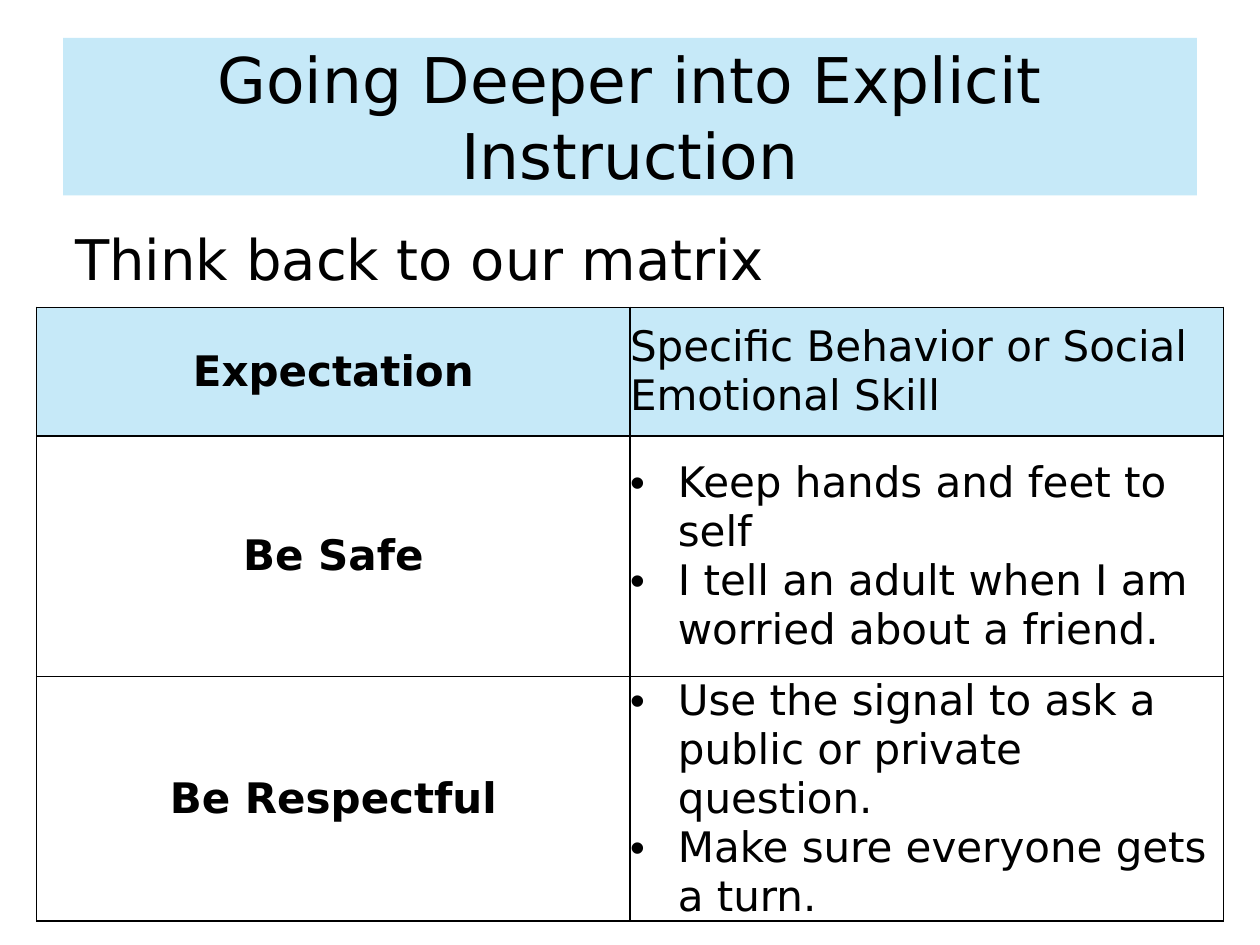
from dataclasses import dataclass
from typing import Optional

from pptx import Presentation
from pptx.dml.color import RGBColor
from pptx.enum.text import MSO_ANCHOR, MSO_AUTO_SIZE, PP_ALIGN
from pptx.oxml import parse_xml
from pptx.oxml.ns import nsdecls
from pptx.util import Inches, Pt

COLORS = {"text": "000000", "band": "C6E9F8", "border": "000000"}
FONT = "DejaVu Sans"
BULLET_INDENT = Inches(0.38)
BORDER_WIDTH = Pt(1)


@dataclass
class MatrixRow:
    height: float
    expectation: str
    behaviors: list[str]
    fill: Optional[str] = None
    bulleted: bool = True


ROWS = [
    MatrixRow(1.02, "Expectation", ["Specific Behavior or Social Emotional Skill"],
              COLORS["band"], False),
    MatrixRow(1.91, "Be Safe", ["Keep hands and feet to self",
                                "I tell an adult when I am worried about a friend."]),
    MatrixRow(1.94, "Be Respectful", ["Use the signal to ask a public or private question.",
                                      "Make sure everyone gets a turn."]),
]


def write_lines(frame, lines: list[str], size: int, align=PP_ALIGN.LEFT,
                bold: bool = False, bulleted: bool = False) -> None:
    for index, line in enumerate(lines):
        para = frame.paragraphs[0] if index == 0 else frame.add_paragraph()
        para.alignment = align
        span = para.add_run()
        span.text = line
        for name, value in {"name": FONT, "size": Pt(size), "bold": bold}.items():
            setattr(span.font, name, value)
        span.font.color.rgb = RGBColor.from_string(COLORS["text"])
        if bulleted:
            add_bullet(para)


def add_bullet(para) -> None:
    properties = para._p.get_or_add_pPr()
    properties.set("marL", str(BULLET_INDENT))
    properties.set("indent", str(-BULLET_INDENT))
    for xml in (
        f'<a:buClr {nsdecls("a")}><a:srgbClr val="{COLORS["text"]}"/></a:buClr>',
        f'<a:buFont {nsdecls("a")} typeface="Arial"/>',
        f'<a:buChar {nsdecls("a")} char="•"/>',
    ):
        properties.append(parse_xml(xml))


def format_cell(cell, fill: Optional[str]) -> None:
    cell_format = {"vertical_anchor": MSO_ANCHOR.MIDDLE, "margin_left": 0,
                   "margin_right": 0, "margin_top": 0, "margin_bottom": 0}
    for name, value in cell_format.items():
        setattr(cell, name, value)
    if fill:
        cell.fill.solid()
        cell.fill.fore_color.rgb = RGBColor.from_string(fill)
    else:
        cell.fill.background()
    # Borders come before the fill in the cell properties
    properties = cell._tc.get_or_add_tcPr()
    for position, side in enumerate(("lnL", "lnR", "lnT", "lnB")):
        properties.insert(position, parse_xml(
            f'<a:{side} {nsdecls("a")} w="{BORDER_WIDTH}"><a:solidFill>'
            f'<a:srgbClr val="{COLORS["border"]}"/></a:solidFill></a:{side}>'))


def add_matrix(page, rows: list[MatrixRow]) -> None:
    total_height = sum(row.height for row in rows)
    table = page.shapes.add_table(len(rows), 2, Inches(0.29), Inches(2.44),
                                  Inches(9.42), Inches(total_height)).table
    table.horz_banding = False
    for column in table.columns:
        column.width = Inches(4.71)
    for index, row in enumerate(rows):
        table.rows[index].height = Inches(row.height)
        name_cell, behavior_cell = table.cell(index, 0), table.cell(index, 1)
        for cell in (name_cell, behavior_cell):
            format_cell(cell, row.fill)
        write_lines(name_cell.text_frame, [row.expectation], 24, PP_ALIGN.CENTER, bold=True)
        write_lines(behavior_cell.text_frame, row.behaviors, 24, bulleted=row.bulleted)


def add_title(page, text: str) -> None:
    title = page.shapes.title
    place = {"left": 0.5, "top": 0.3, "width": 9, "height": 1.25}
    for name, value in place.items():
        setattr(title, name, Inches(value))
    title.fill.solid()
    title.fill.fore_color.rgb = RGBColor.from_string(COLORS["band"])
    frame = title.text_frame
    frame.auto_size = MSO_AUTO_SIZE.NONE
    frame.vertical_anchor = MSO_ANCHOR.MIDDLE
    write_lines(frame, [text], 36, PP_ALIGN.CENTER)


def main() -> None:
    deck = Presentation()
    deck.slide_width, deck.slide_height = Inches(10), Inches(7.5)
    page = deck.slides.add_slide(deck.slide_layouts[5])

    # Expectation matrix
    add_matrix(page, ROWS)

    # Lead-in line
    box = page.shapes.add_textbox(Inches(0.5), Inches(1.73), Inches(6), Inches(0.68))
    box.text_frame.word_wrap = True
    write_lines(box.text_frame, ["Think back to our matrix"], 32)

    # Title band
    add_title(page, "Going Deeper into Explicit Instruction")

    deck.save("out.pptx")


if __name__ == "__main__":
    main()
